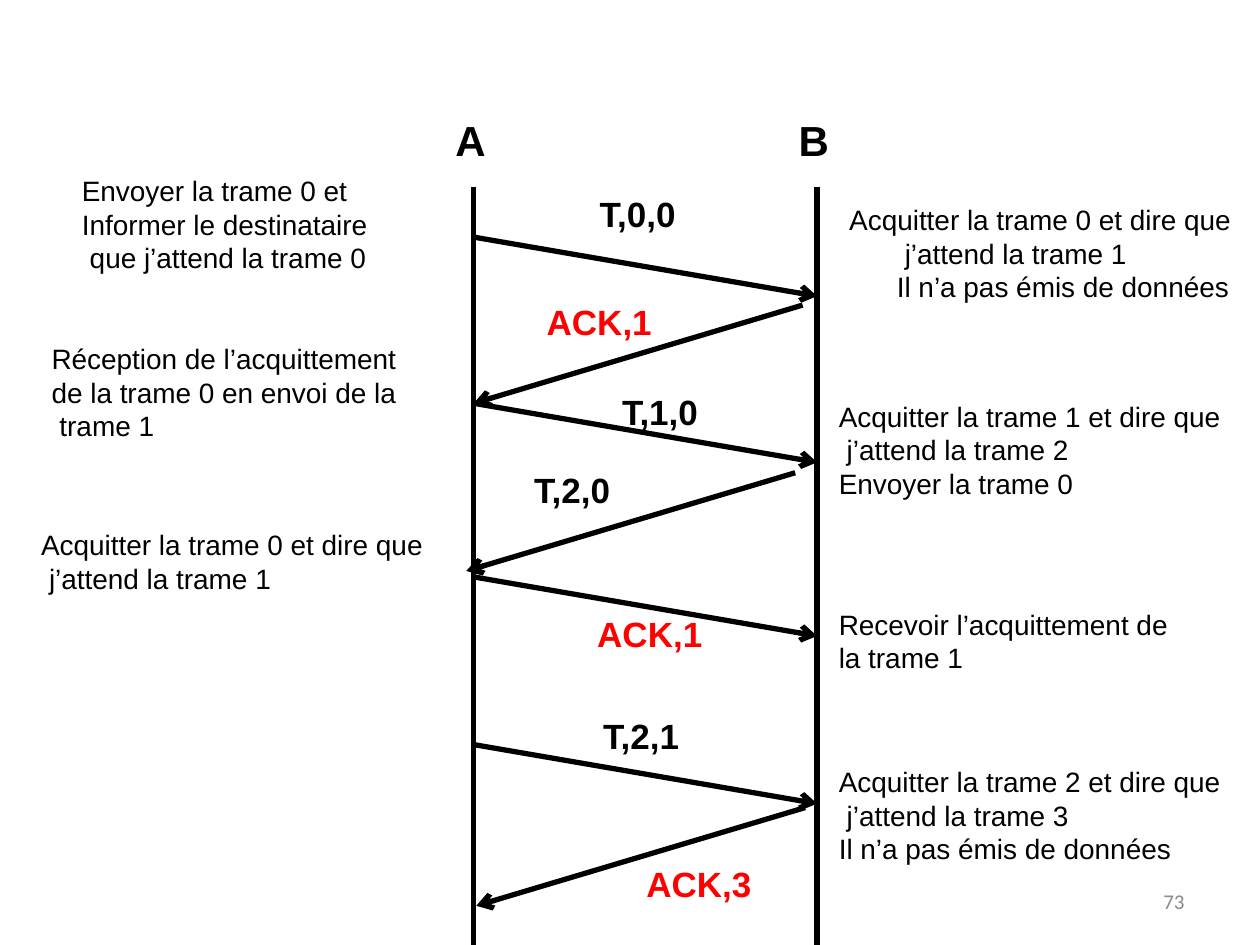
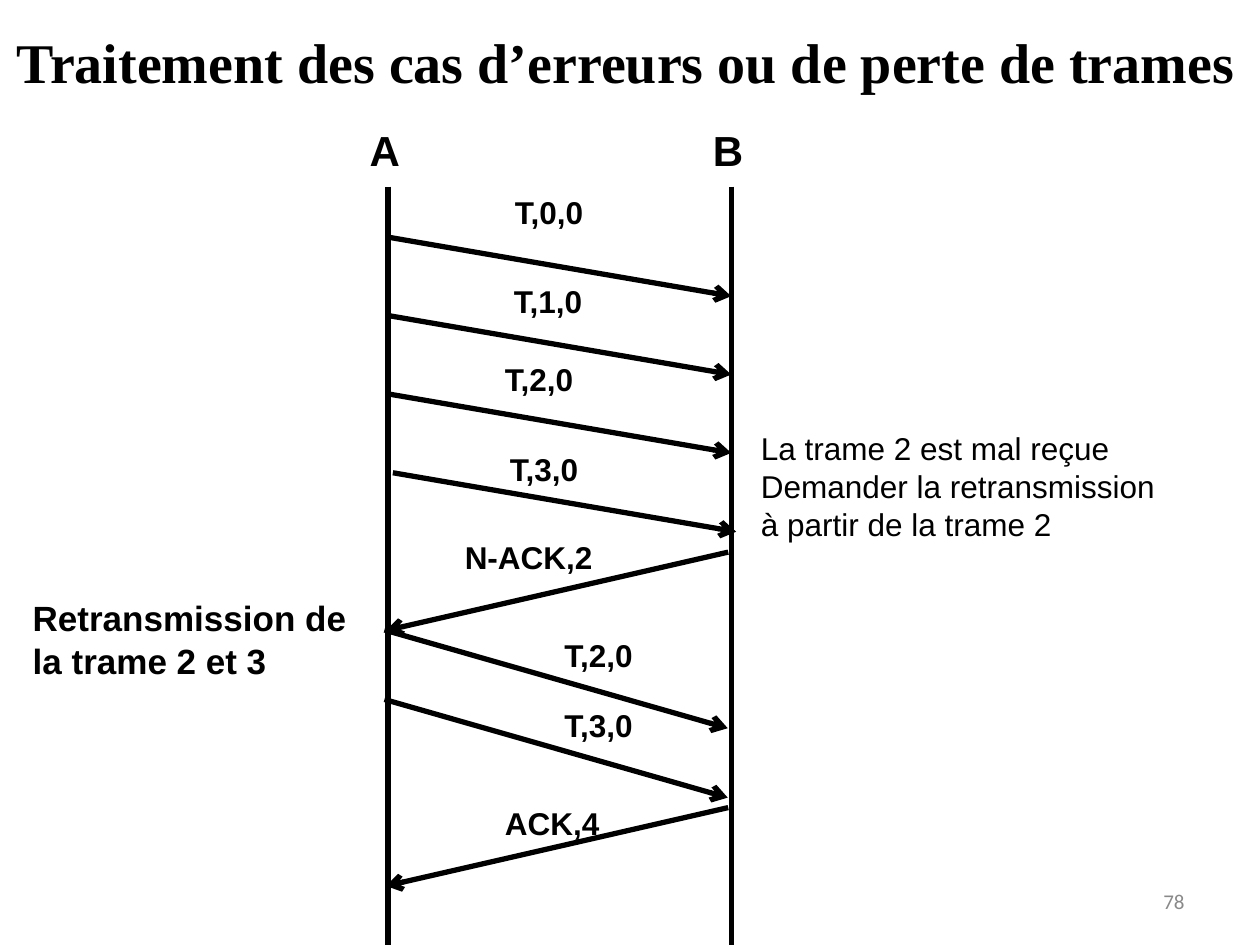
"""Build two slides that show frames and replies passing between A and B."""
from dataclasses import dataclass

import lxml.etree
import pptx
import pptx.dml.color
import pptx.enum.shapes
import pptx.enum.text
import pptx.oxml.ns
import pptx.presentation
import pptx.shapes.autoshape
import pptx.slide
import pptx.text.text
import pptx.util
from pptx.util import Cm

BLACK = pptx.dml.color.RGBColor(0x00, 0x00, 0x00)
RED = pptx.dml.color.RGBColor(0xFF, 0x00, 0x00)
GREY = pptx.dml.color.RGBColor(0x89, 0x89, 0x89)
Color = pptx.dml.color.RGBColor
Align = pptx.enum.text.PP_ALIGN

SANS = "Arial"
SERIF = "Times New Roman"
PLAIN = "Calibri"
WIDE, HIGH = 25.4, 19.05
AXIS_TOP = 3.76
SPAN = 6.92
SLOPE = 1.19
NUDGE = 0.16
STEP = 0.96


@dataclass(frozen=True)
class Style:
    """Look of a run of text."""
    size: int
    bold: bool = False
    color: Color = BLACK
    font: str = SANS


@dataclass(frozen=True)
class Line:
    """One paragraph and its left indent in centimetres."""
    text: str
    indent: float = 0


@dataclass(frozen=True)
class Note:
    """A text box, with its place in centimetres."""
    left: float
    top: float
    width: float
    height: float
    style: Style
    lines: tuple[Line, ...]


@dataclass(frozen=True)
class Arrow:
    """A message from its start, with a signed run and a drop."""
    left: float
    top: float
    run: float = SPAN
    drop: float = SLOPE


HEAD = Style(24, True)
FRAME = Style(20, True)
REPLY = Style(20, True, RED)
SMALL = Style(18, True)
BODY = Style(16)
LARGE = Style(18)
TITLE = Style(32, True, font=SERIF)
NUMBER = Style(12, color=GREY, font=PLAIN)


def label(left: float, top: float, width: float, style: Style, text: str) -> Note:
    """Make a note with a single line."""
    return Note(left, top, width, 1.1, style, (Line(text),))


def write(para: pptx.text.text._Paragraph, text: str, style: Style) -> None:
    """Add one styled run to a paragraph."""
    run = para.add_run()
    run.text = text
    run.font.name = style.font
    run.font.size = pptx.util.Pt(style.size)
    run.font.bold = style.bold
    run.font.color.rgb = style.color


def fit(frame: pptx.text.text.TextFrame) -> None:
    """Let the box grow with its unwrapped text."""
    frame.word_wrap = False
    frame.auto_size = pptx.enum.text.MSO_AUTO_SIZE.SHAPE_TO_FIT_TEXT


def place_note(slide: pptx.slide.Slide, note: Note) -> None:
    """Draw a text box."""
    box = slide.shapes.add_textbox(
        Cm(note.left), Cm(note.top), Cm(note.width), Cm(note.height))
    frame = box.text_frame
    fit(frame)
    for pos, line in enumerate(note.lines):
        para = frame.add_paragraph() if pos else frame.paragraphs[0]
        if line.indent:
            para._p.get_or_add_pPr().set("marL", str(Cm(line.indent)))
        write(para, line.text, note.style)


def place_line(slide: pptx.slide.Slide, part: Arrow, tip: bool = True) -> None:
    """Draw a straight line, with an arrowhead if asked."""
    line = slide.shapes.add_connector(
        pptx.enum.shapes.MSO_CONNECTOR.STRAIGHT, Cm(part.left), Cm(part.top),
        Cm(part.left + part.run), Cm(part.top + part.drop))
    line.line.color.rgb = BLACK
    line.line.width = pptx.util.Pt(3)
    if tip:
        lxml.etree.SubElement(line.line._get_or_add_ln(),
                              pptx.oxml.ns.qn("a:tailEnd"), type="arrow")
    lxml.etree.SubElement(line._element.spPr, pptx.oxml.ns.qn("a:effectLst"))


def place_axes(slide: pptx.slide.Slide, left: float, top: float) -> None:
    """Draw the time lines of A and B with their names."""
    for pos, name in enumerate("AB"):
        spot = left + pos * SPAN
        place_line(slide, Arrow(spot, AXIS_TOP, 0, HIGH - AXIS_TOP), False)
        place_note(slide, label(spot - 0.62, top, 1.5, HEAD, name))


def place_number(slide: pptx.slide.Slide, number: int) -> None:
    """Draw the page number at the lower right."""
    box = slide.shapes.add_textbox(Cm(18.21), Cm(17.65), Cm(5.92), Cm(1.02))
    frame = box.text_frame
    frame.word_wrap = True
    frame.vertical_anchor = pptx.enum.text.MSO_ANCHOR.MIDDLE
    frame.paragraphs[0].alignment = Align.RIGHT
    write(frame.paragraphs[0], str(number), NUMBER)


def place_title(slide: pptx.slide.Slide, text: str) -> None:
    """Move and fill the title."""
    box = slide.shapes.title
    box.left, box.top, box.width, box.height = Cm(0), Cm(0.41), Cm(25.25), Cm(1.63)
    fit(box.text_frame)
    para = box.text_frame.paragraphs[0]
    para.alignment = Align.CENTER
    write(para, text, TITLE)


def fill(slide: pptx.slide.Slide, arrows: list[Arrow], notes: list[Note],
         number: int) -> None:
    """Draw the messages, the notes and the page number."""
    for arrow in arrows:
        place_line(slide, arrow)
    for note in notes:
        place_note(slide, note)
    place_number(slide, number)


def add_normal(deck: pptx.presentation.Presentation) -> None:
    """Add the slide of the normal exchange."""
    slide = deck.slides.add_slide(deck.slide_layouts[6])
    place_axes(slide, 9.55, 2.18)
    sent = [Arrow(9.55, top) for top in (4.78, 8.13, 11.63, 15.01)]
    back = [Arrow(left, top, -6.63, 1.98)
            for left, top in ((16.18, 6.15), (16.03, 9.53), (16.23, 16.28))]
    ask = "Acquitter la trame {} et dire que"
    wait = "j’attend la trame {}"
    none = "Il n’a pas émis de données"
    notes = [
        label(11.84, 3.76, 2.06, FRAME, "T,0,0"),
        label(10.77, 5.94, 2.64, REPLY, "ACK,1"),
        label(12.29, 7.75, 2.13, FRAME, "T,1,0"),
        label(10.52, 9.32, 2.06, FRAME, "T,2,0"),
        label(11.79, 12.22, 2.64, REPLY, "ACK,1"),
        label(11.91, 14.27, 2.11, FRAME, "T,2,1"),
        label(12.78, 17.27, 2.64, REPLY, "ACK,3"),
        Note(1.4, 3.38, 6.3, 2.3, BODY, (
            Line("Envoyer la trame 0 et"), Line("Informer le destinataire"),
            Line("que " + wait.format(0), NUDGE))),
        Note(0.79, 6.76, 7.7, 2.3, BODY, (
            Line("Réception de l’acquittement"),
            Line("de la trame 0 en envoi de la"), Line("trame 1", NUDGE))),
        Note(0.58, 10.52, 8.31, 1.63, BODY, (
            Line(ask.format(0)), Line(wait.format(1), NUDGE))),
        Note(16.87, 3.96, 8.31, 2.3, BODY, (
            Line(ask.format(0)), Line(wait.format(1), STEP + NUDGE),
            Line(none, STEP))),
        Note(16.66, 7.92, 8.31, 2.3, BODY, (
            Line(ask.format(1)), Line(wait.format(2), NUDGE),
            Line("Envoyer la trame 0"))),
        Note(16.66, 12.12, 7.39, 1.63, BODY, (
            Line("Recevoir l’acquittement de"), Line("la trame 1"))),
        Note(16.66, 15.29, 8.23, 2.3, BODY, (
            Line(ask.format(2)), Line(wait.format(3), NUDGE), Line(none))),
    ]
    fill(slide, sent + back, notes, 73)


def add_error(deck: pptx.presentation.Presentation) -> None:
    """Add the slide of the exchange with a bad frame."""
    slide = deck.slides.add_slide(deck.slide_layouts[5])
    place_title(slide, "Traitement des cas d’erreurs ou de perte de trames")
    place_axes(slide, 7.82, 2.39)
    sent = [Arrow(7.82, 4.78 + pos * 1.58) for pos in range(3)]
    sent.append(Arrow(7.92, 9.53))
    again = [Arrow(7.75, top, drop=1.98) for top in (12.7, 14.1)]
    back = [Arrow(14.68, top, -6.9, 1.58) for top in (11.13, 16.28)]
    notes = [
        label(10.13, 3.76, 1.9, SMALL, "T,0,0"),
        label(10.11, 5.56, 1.9, SMALL, "T,1,0"),
        label(9.93, 7.14, 1.9, SMALL, "T,2,0"),
        label(10.03, 8.94, 1.9, SMALL, "T,3,0"),
        label(9.12, 10.72, 3.1, SMALL, "N-ACK,2"),
        label(11.13, 12.7, 1.9, SMALL, "T,2,0"),
        label(11.13, 14.1, 1.9, SMALL, "T,3,0"),
        label(9.93, 16.08, 2.41, SMALL, "ACK,4"),
        Note(15.09, 8.53, 8.71, 2.57, LARGE, (
            Line("La trame 2 est mal reçue"), Line("Demander la retransmission"),
            Line("à partir de la trame 2"))),
        Note(0.41, 11.91, 7.01, 1.96, FRAME, (
            Line("Retransmission de"), Line("la trame 2 et 3"))),
    ]
    fill(slide, sent + again + back, notes, 78)


def main() -> None:
    """Build and save the slides."""
    deck = pptx.Presentation()
    deck.slide_width, deck.slide_height = Cm(WIDE), Cm(HIGH)
    add_normal(deck)
    add_error(deck)
    deck.save("out.pptx")


if __name__ == "__main__":
    main()
